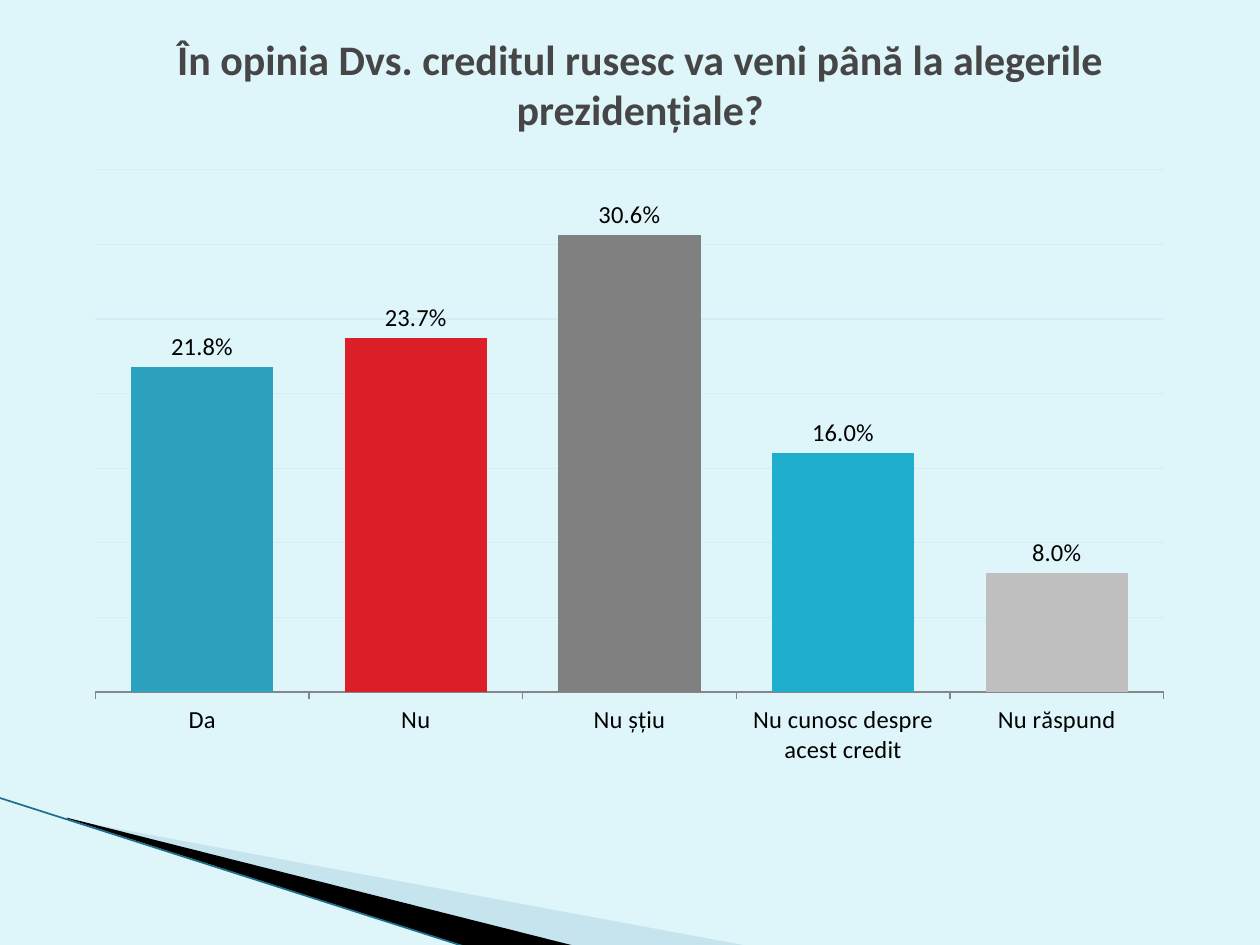
from lxml.etree import SubElement
from pptx import Presentation
from pptx.chart.data import CategoryChartData
from pptx.dml.color import RGBColor
from pptx.enum.chart import XL_CHART_TYPE as ChartType, XL_LABEL_POSITION as LabelPosition
from pptx.enum.chart import XL_TICK_MARK as TickMark
from pptx.enum.shapes import MSO_CONNECTOR as Connector
from pptx.enum.text import MSO_ANCHOR as Anchor, MSO_AUTO_SIZE as AutoSize, PP_ALIGN as Align
from pptx.oxml.ns import qn
from pptx.util import Pt

FONT = "Calibri"
COLORS = {
    "background": "DEF5FA",
    "title": "464646",
    "text": "000000",
    "grid": "D3EEF5",
    "axis": "868686",
    "pale_wedge": "A0CBDC",
    "dark_wedge": "000000",
    "edge": "1B6F88",
    "teal": "2DA2BF",
    "red": "DA1F28",
    "gray": "808080",
    "blue": "1FAECD",
    "silver": "BFBFBF",
}
ANSWERS = [
    ("Da", 0.218, "teal"),
    ("Nu", 0.237, "red"),
    ("Nu șțiu", 0.306, "gray"),
    ("Nu cunosc despre acest credit", 0.16, "blue"),
    ("Nu răspund", 0.08, "silver"),
]


def color(name):
    return RGBColor.from_string(COLORS[name])


def paint(fill, name):
    fill.solid()
    fill.fore_color.rgb = color(name)


def add_wedge(page, points, name, opacity=None):
    start, *others = [(Pt(x), Pt(y)) for x, y in points]
    builder = page.shapes.build_freeform(*start, scale=1.0)
    builder.add_line_segments(others, close=True)
    wedge = builder.convert_to_shape()
    wedge.shadow.inherit = False
    wedge.line.fill.background()
    paint(wedge.fill, name)
    if opacity is not None:
        tint = wedge.fill._xPr.find(qn("a:solidFill"))[0]
        SubElement(tint, qn("a:alpha"), val=str(opacity * 1000))


def add_edge(page, start, end):
    edge = page.shapes.add_connector(Connector.STRAIGHT, *map(Pt, start + end))
    edge.line.color.rgb = color("edge")
    edge.line.width = Pt(0.95)
    SubElement(edge._element.spPr, qn("a:effectLst"))


def fill_title(page, text):
    title = page.shapes.title
    title.left, title.top, title.width, title.height = map(Pt, (41.8, 18, 648, 59.8))
    frame = title.text_frame
    frame.text = text
    frame.word_wrap = True
    frame.auto_size = AutoSize.NONE
    frame.vertical_anchor = Anchor.MIDDLE
    para = frame.paragraphs[0]
    para.alignment = Align.CENTER
    span = para.runs[0]
    span.font.name = FONT
    span.font.size = Pt(24)
    span.font.bold = True
    span.font.color.rgb = color("title")


def add_answer_chart(page):
    data = CategoryChartData(number_format="0.0%")
    data.categories = [label for label, _, _ in ANSWERS]
    data.add_series("Series 1", [share for _, share, _ in ANSWERS])
    box = map(Pt, (41.8, 90, 635.8, 354.2))
    chart = page.shapes.add_chart(ChartType.COLUMN_CLUSTERED, *box, data).chart
    chart.has_title = False
    chart.has_legend = False
    chart.font.name = FONT
    chart.font.size = Pt(14)
    chart.font.color.rgb = color("text")

    answers = chart.category_axis
    answers.major_tick_mark = TickMark.OUTSIDE
    answers.format.line.color.rgb = color("axis")
    shares = chart.value_axis
    shares.visible = False
    shares.minimum_scale, shares.maximum_scale, shares.major_unit = 0, 0.35, 0.05
    shares.has_major_gridlines = True
    shares.major_gridlines.format.line.color.rgb = color("grid")
    shares.major_gridlines.format.line.width = Pt(0.75)

    plot = chart.plots[0]
    plot.gap_width = 50
    plot.vary_by_categories = False
    plot.has_data_labels = True
    labels = plot.data_labels
    labels.show_value = True
    labels.number_format = "0.0%"
    labels.number_format_is_linked = False
    labels.position = LabelPosition.OUTSIDE_END
    for index, (_, _, name) in enumerate(ANSWERS):
        paint(plot.series[0].points[index].format.fill, name)


def main():
    deck = Presentation()
    deck.slide_width, deck.slide_height = Pt(720), Pt(540)
    page = deck.slides.add_slide(deck.slide_layouts[5])
    paint(page.background.fill, "background")
    add_wedge(page, [(39.6, 468.5), (428.4, 540.7), (328.3, 540.7), (39.6, 468)], "pale_wedge", 40)
    add_wedge(page, [(38.2, 467.3), (329, 540.7), (267.8, 541.4), (38.9, 468)], "dark_wedge")
    add_edge(page, (-0.7, 455.8), (267.1, 541.4))
    fill_title(page, "În opinia Dvs. creditul rusesc va veni până la alegerile prezidențiale?")
    add_answer_chart(page)
    deck.save("out.pptx")


if __name__ == "__main__":
    main()
